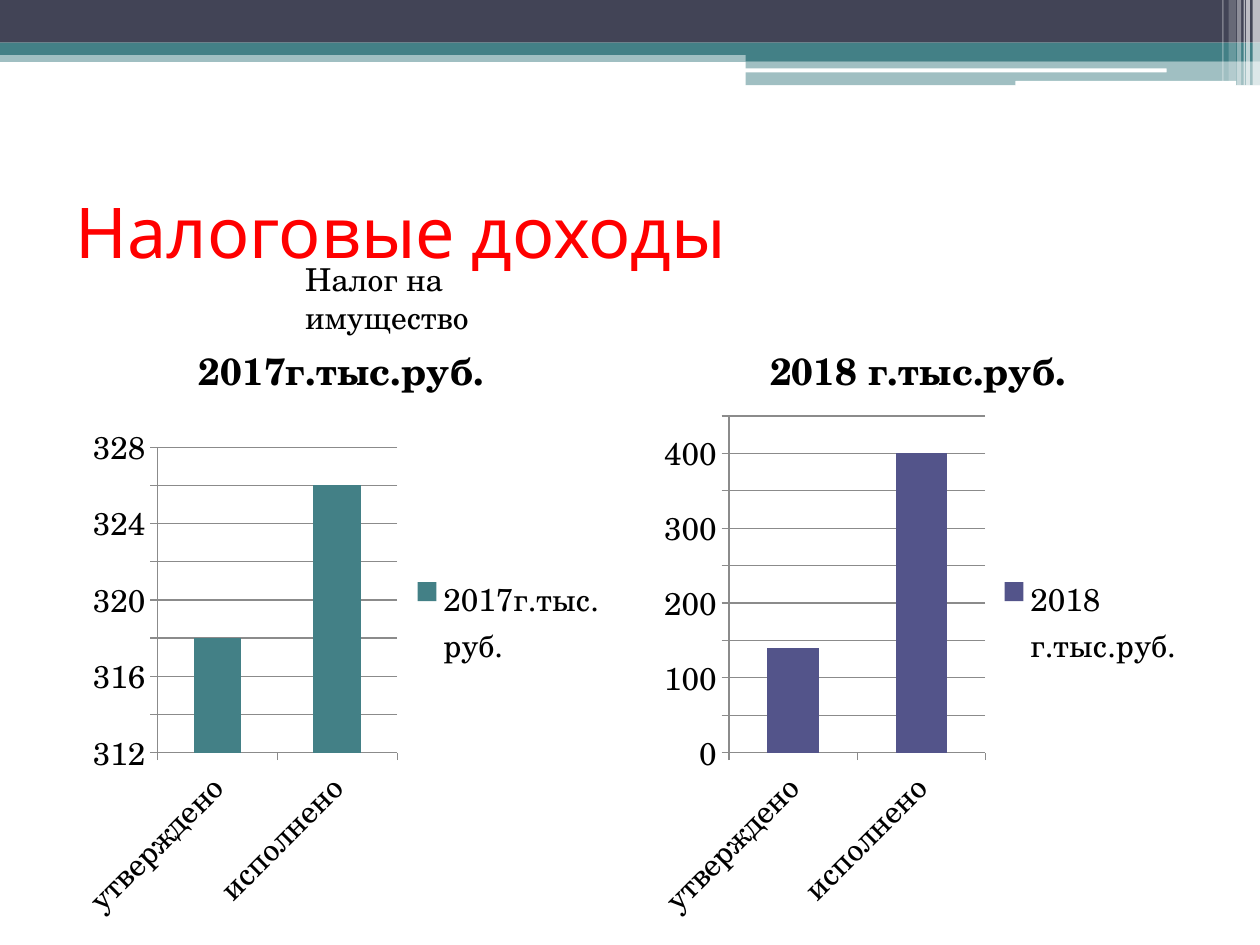
import pptx
import pptx.chart.data
import pptx.dml.color
import pptx.enum.chart
import pptx.enum.shapes
import pptx.enum.text
import pptx.oxml
import pptx.oxml.ns
import pptx.util
from lxml import etree

Cm = pptx.util.Cm
Pt = pptx.util.Pt
RGBColor = pptx.dml.color.RGBColor
qn = pptx.oxml.ns.qn

TEAL = RGBColor(0x43, 0x80, 0x86)
SLATE = RGBColor(0x42, 0x44, 0x56)
VIOLET = RGBColor(0x53, 0x54, 0x8A)
WHITE = RGBColor(0xFF, 0xFF, 0xFF)
RED = RGBColor(0xFF, 0, 0)
BLACK = RGBColor(0, 0, 0)
GREY = RGBColor(0x8B, 0x8B, 0x8B)
HEADING_FONT = "Karla"
BODY_FONT = "TeX Gyre Schola"

HEADING = "Налоговые доходы"
TAX_NAME = "Налог на имущество"
STAGES = ["утверждено", "исполнено"]
YEARS = [
    {"name": "2017г.тыс.руб.", "values": [318, 326], "color": TEAL, "left": 1.27,
     "scale": (312, 328, 2), "plot": (0.17, 0.22, 0.43, 0.49)},
    {"name": "2018 г.тыс.руб.", "values": [140, 400], "color": VIOLET, "left": 12.9,
     "scale": (0, 450, 50), "plot": (0.16, 0.17, 0.46, 0.54)},
]
BANDS = [
    (0, 1.02, 25.4, 0.23, TEAL, 50),
    (0, 0, 25.4, 0.86, SLATE, 100),
    (0, 0.86, 25.4, 0.25, TEAL, 100),
    (15.03, 0.98, 10.37, 0.25, TEAL, 100),
    (15.03, 1.23, 10.37, 0.49, TEAL, 50),
]
ROUNDED_LINES = [
    (15.01, 1.38, 8.51, 0.08, WHITE, 100),
    (20.47, 1.63, 4.45, 0.1, WHITE, 100),
]
STRIPES = [
    (25.25, 0.15, 1.73, 65),
    (25.12, 0.08, 1.73, 65),
    (25.07, 0.03, 1.73, 60),
    (24.94, 0.08, 1.73, 40),
    (24.77, 0.15, 1.63, 20),
    (24.64, 0.03, 1.63, 30),
]


def add_band(slide, kind, left, top, width, height, color, opacity):
    band = slide.shapes.add_shape(kind, Cm(left), Cm(top), Cm(width), Cm(height))
    band.shadow.inherit = False
    band.line.fill.background()
    band.fill.solid()
    band.fill.fore_color.rgb = color
    if opacity < 100:
        tint = band.fill._xPr.find(".//" + qn("a:srgbClr"))
        etree.SubElement(tint, qn("a:alpha"), val=str(opacity * 1000))


def style_font(font, name, size, color, bold=False):
    font.name = name
    font.size = Pt(size)
    font.color.rgb = color
    font.bold = bold


def place_plot(chart, box):
    plot_area = chart._chartSpace.chart.plotArea
    for old in plot_area.findall(qn("c:layout")):
        plot_area.remove(old)
    layout = etree.Element(qn("c:layout"))
    plot_area.insert(0, layout)
    manual = etree.SubElement(layout, qn("c:manualLayout"))
    settings = [("layoutTarget", "inner"), ("xMode", "edge"), ("yMode", "edge")]
    for tag, value in settings + list(zip("xywh", box)):
        etree.SubElement(manual, qn("c:" + tag), val=str(value))


def add_year_chart(slide, year):
    data = pptx.chart.data.CategoryChartData()
    data.categories = STAGES
    data.add_series(year["name"], year["values"])
    chart = slide.shapes.add_chart(
        pptx.enum.chart.XL_CHART_TYPE.COLUMN_STACKED,
        Cm(year["left"]), Cm(6.25), Cm(11.23), Cm(12.57), data).chart
    style_font(chart.font, BODY_FONT, 18, BLACK)
    chart.has_title = True
    chart.chart_title.text_frame.text = year["name"]
    title_run = chart.chart_title.text_frame.paragraphs[0].runs[0]
    style_font(title_run.font, BODY_FONT, 21.6, BLACK, True)
    chart.has_legend = True
    chart.legend.position = pptx.enum.chart.XL_LEGEND_POSITION.RIGHT
    chart.legend.include_in_layout = False

    plot = chart.plots[0]
    plot.gap_width = 150
    plot.overlap = 100
    plot.vary_by_categories = False
    plot.series[0].format.fill.solid()
    plot.series[0].format.fill.fore_color.rgb = year["color"]

    amounts, stages = chart.value_axis, chart.category_axis
    amounts.minimum_scale, amounts.maximum_scale, amounts.major_unit = year["scale"]
    amounts.has_major_gridlines = True
    for line in (amounts.format.line, stages.format.line, amounts.major_gridlines.format.line):
        line.color.rgb = GREY
        line.width = Pt(0.7)
    for axis in (amounts, stages):
        axis.major_tick_mark = pptx.enum.chart.XL_TICK_MARK.OUTSIDE
        style_font(axis.tick_labels.font, BODY_FONT, 18, BLACK)
    amounts.tick_labels.number_format = "General"
    amounts.tick_labels.number_format_is_linked = False
    stages._element.find(qn("c:txPr")).find(qn("a:bodyPr")).set("rot", "-2700000")
    place_plot(chart, year["plot"])


def main():
    deck = pptx.Presentation()
    deck.slide_width, deck.slide_height = Cm(25.4), Cm(19.05)
    slide = deck.slides.add_slide(deck.slide_layouts[5])
    kinds = pptx.enum.shapes.MSO_SHAPE
    for band in BANDS:
        add_band(slide, kinds.RECTANGLE, *band)
    for rounded in ROUNDED_LINES:
        add_band(slide, kinds.ROUNDED_RECTANGLE, *rounded)
    for left, width, height, opacity in STRIPES:
        add_band(slide, kinds.RECTANGLE, left, 0, width, height, WHITE, opacity)

    heading = slide.shapes.title
    heading.left, heading.top, heading.width, heading.height = Cm(1.27), Cm(3.17), Cm(22.86), Cm(2.97)
    heading.text_frame.text = HEADING
    heading.text_frame.vertical_anchor = pptx.enum.text.MSO_ANCHOR.MIDDLE
    heading_line = heading.text_frame.paragraphs[0]
    heading_line.alignment = pptx.enum.text.PP_ALIGN.LEFT
    style_font(heading_line.runs[0].font, HEADING_FONT, 40, RED)

    for year in YEARS:
        add_year_chart(slide, year)

    tax_label = slide.shapes.add_textbox(Cm(5.9), Cm(5.12), Cm(6.25), Cm(1.02))
    tax_label.text_frame.word_wrap = True
    tax_label.text_frame.text = TAX_NAME
    style_font(tax_label.text_frame.paragraphs[0].runs[0].font, BODY_FONT, 18, BLACK)
    deck.save("out.pptx")


if __name__ == "__main__":
    main()
